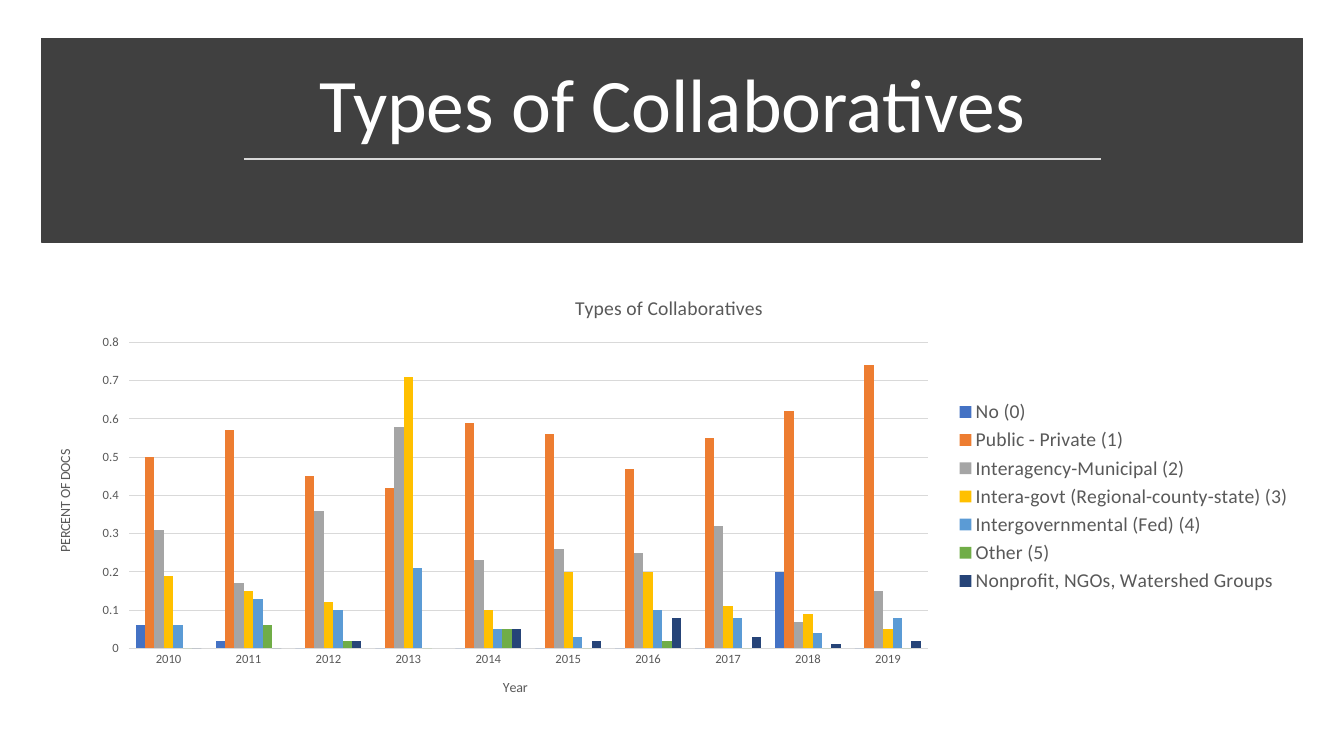
from lxml import etree
from pptx import Presentation
from pptx import util as u
from pptx.chart.data import CategoryChartData
from pptx.dml.color import RGBColor
from pptx.enum import chart as ch, shapes, text

HUES = {"dark": "404040", "white": "FFFFFF", "rule": "D9D9D9", "gray": "595959"}
YEARS = [str(year) for year in range(2010, 2020)]
TYPES = [
    ("No (0)", "4472C4", [0.06, 0.02, 0, 0, 0, 0, 0, 0, 0.2, 0]),
    ("Public - Private (1)", "ED7D31",
     [0.5, 0.57, 0.45, 0.42, 0.59, 0.56, 0.47, 0.55, 0.62, 0.74]),
    ("Interagency-Municipal (2)", "A5A5A5",
     [0.31, 0.17, 0.36, 0.58, 0.23, 0.26, 0.25, 0.32, 0.07, 0.15]),
    ("Intera-govt (Regional-county-state) (3)", "FFC000",
     [0.19, 0.15, 0.12, 0.71, 0.1, 0.2, 0.2, 0.11, 0.09, 0.05]),
    ("Intergovernmental (Fed) (4)", "5B9BD5",
     [0.06, 0.13, 0.1, 0.21, 0.05, 0.03, 0.1, 0.08, 0.04, 0.08]),
    ("Other (5)", "70AD47", [0, 0.06, 0.02, 0, 0.05, 0, 0.02, 0, 0, 0]),
    ("Nonprofit, NGOs, Watershed Groups", "264478",
     [0, 0, 0.02, None, 0.05, 0.02, 0.08, 0.03, 0.01, 0.02]),
]


def rgb(hue):
    return RGBColor.from_string(HUES.get(hue, hue))


def put(item, **form):
    for name, value in form.items():
        setattr(item, name, value)


def box(*sides):
    return [u.Inches(side) for side in sides]


class Deck:
    """Hold the style and the current slide, and draw its elements."""

    def __init__(self, face):
        self.face = face
        self.show = Presentation()
        put(self.show, slide_width=u.Inches(13.33), slide_height=u.Inches(7.5))
        self.slide = self.show.slides.add_slide(self.show.slide_layouts[5])

    def font(self, font, size, hue="gray"):
        put(font, name=self.face, size=u.Pt(size), bold=False)
        font.color.rgb = rgb(hue)

    def fill(self, fill, hue):
        fill.solid()
        fill.fore_color.rgb = rgb(hue)

    def line(self, line, hue, width):
        self.fill(line.fill, hue)
        line.width = u.Pt(width)

    def band(self, sides, hue):
        rect = self.slide.shapes.add_shape(shapes.MSO_SHAPE.RECTANGLE, *box(*sides))
        rect.shadow.inherit = False
        self.fill(rect.fill, hue)
        self.line(rect.line, hue, 1)
        self.slide.shapes.title.element.addprevious(rect.element)

    def title(self, words, sides, size, hue):
        title = self.slide.shapes.title
        put(title, **dict(zip(("left", "top", "width", "height"), box(*sides))))
        frame = title.text_frame
        put(frame, text=words, word_wrap=True, auto_size=text.MSO_AUTO_SIZE.NONE,
            vertical_anchor=text.MSO_ANCHOR.BOTTOM)
        para = frame.paragraphs[0]
        put(para, alignment=text.PP_ALIGN.CENTER, line_spacing=0.9)
        self.font(para.runs[0].font, size, hue)

    def rule(self, ends, hue, width):
        rule = self.slide.shapes.add_connector(
            shapes.MSO_CONNECTOR.STRAIGHT, *box(*ends))
        self.line(rule.line, hue, width)
        space = "http://schemas.openxmlformats.org/drawingml/2006/main"
        etree.SubElement(rule.element.spPr, f"{{{space}}}effectLst")

    def label(self, owner, words, size):
        frame = owner.text_frame
        frame.text = words
        self.font(frame.paragraphs[0].runs[0].font, size)

    def axis(self, axis, words, tick):
        put(axis, has_title=True, major_tick_mark=tick,
            minor_tick_mark=ch.XL_TICK_MARK.NONE)
        self.label(axis.axis_title, words, 10)
        self.font(axis.tick_labels.font, 9)

    def chart(self, words, sides, years, types):
        data = CategoryChartData()
        data.categories = years
        for name, _, values in types:
            data.add_series(name, values)
        chart = self.slide.shapes.add_chart(
            ch.XL_CHART_TYPE.COLUMN_CLUSTERED, *box(*sides), data).chart
        self.font(chart.font, 10)
        put(chart, has_title=True, has_legend=True)
        self.label(chart.chart_title, words, 14)
        put(chart.legend, position=ch.XL_LEGEND_POSITION.RIGHT,
            include_in_layout=False)
        self.font(chart.legend.font, 14)
        plot = chart.plots[0]
        put(plot, gap_width=150, overlap=0, vary_by_categories=False)
        for bars, (_, hue, _) in zip(plot.series, types):
            self.fill(bars.format.fill, hue)
            bars.invert_if_negative = False
        base, scale = chart.category_axis, chart.value_axis
        self.axis(base, "Year", ch.XL_TICK_MARK.NONE)
        self.line(base.format.line, "rule", 0.75)
        self.axis(scale, "PERCENT OF DOCS", ch.XL_TICK_MARK.OUTSIDE)
        put(scale, minimum_scale=0, maximum_scale=0.8, major_unit=0.1)
        put(scale.tick_labels, number_format="General", number_format_is_linked=False)
        scale.format.line.fill.background()
        self.line(scale.major_gridlines.format.line, "rule", 0.75)


def main():
    deck = Deck("Calibri")
    topic = "Types of Collaboratives"
    deck.band((0.41, 0.38, 12.51, 2.02), "dark")
    deck.title(topic, (0.58, 0.51, 12.18, 1.02), 54, "white")
    deck.rule((2.42, 1.58, 10.92, 1.58), "rule", 1.75)
    deck.chart(topic, (0.35, 2.74, 12.57, 4.37), YEARS, TYPES)
    deck.show.save("out.pptx")


if __name__ == "__main__":
    main()
